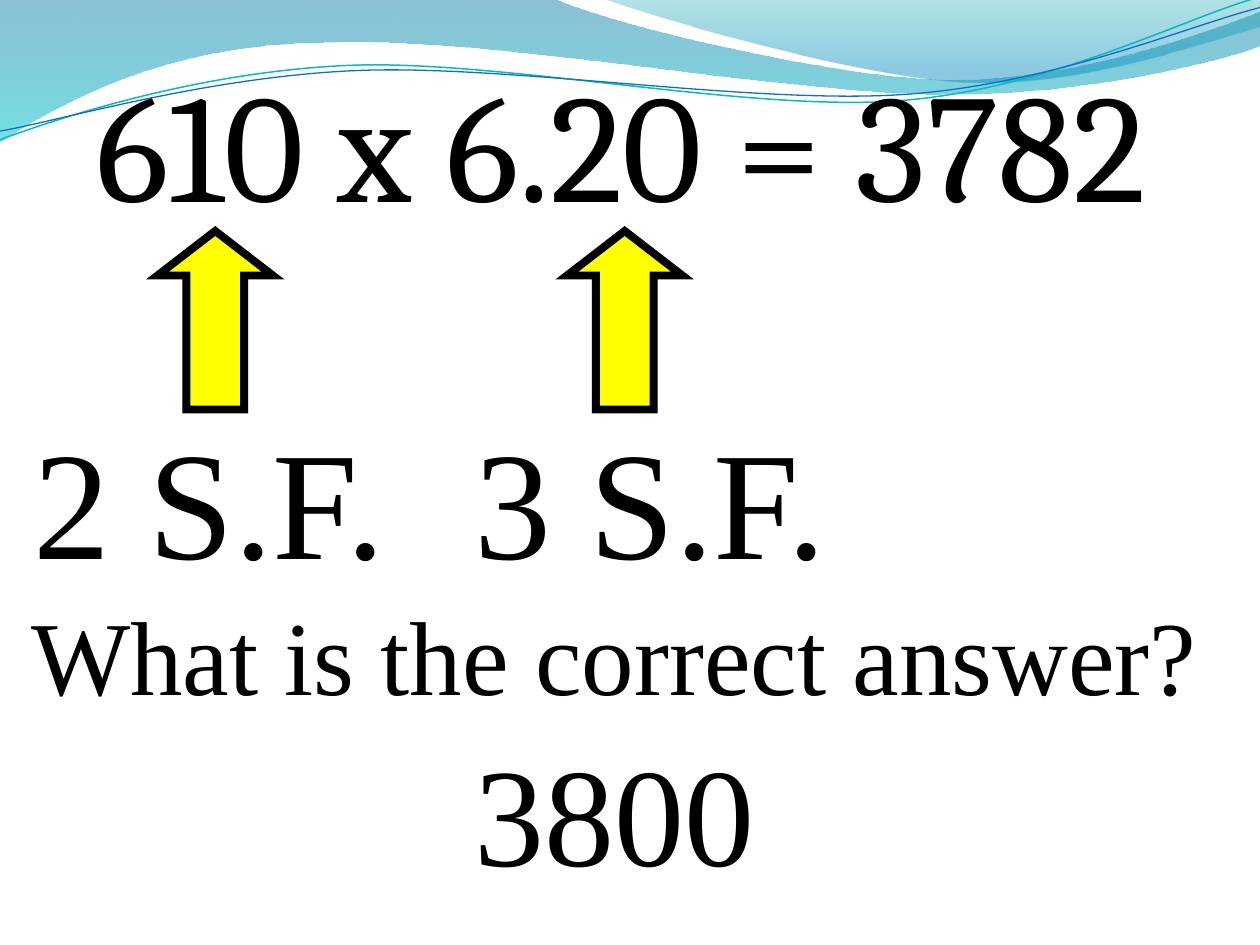
from lxml import etree
from pptx import Presentation
from pptx.dml.color import RGBColor
from pptx.enum.shapes import MSO_SHAPE
from pptx.enum.text import MSO_ANCHOR, PP_ALIGN
from pptx.oxml.ns import qn
from pptx.util import Pt

UP_ARROW = MSO_SHAPE.UP_ARROW
LEFT, CENTER = PP_ALIGN.LEFT, PP_ALIGN.CENTER
TOP = MSO_ANCHOR.TOP

BLACK, YELLOW = "000000", "FFFF00"
SERIF = "Times New Roman"
UNITS_PER_POINT = 100

# Outlines in points: a start, then one point for a line, three for a curve
LEFT_WAVE = [
    [(0, -0.7)], [(316.8, -0.7)],
    [(342.7, 12.2), (478.1, 45.4), (545.8, 45.4)],
    [(614.2, 45.4), (689.8, 18.7), (720, 6.5)],
    [(720.7, 25.9)],
    [(707.8, 31.7), (626.4, 54.7), (537.1, 54)],
    [(447.8, 54), (275, 20.2), (185, 24.5)],
    [(92.9, 25.2), (33.1, 59.8), (-0.7, 81.4)],
]
RIGHT_WAVE = [
    [(344.9, -0.7)],
    [(366.5, 7.9), (491, 44.6), (553.7, 46.8)],
    [(616.3, 49.7), (691.9, 23), (720, 15.1)],
    [(720, 0)],
]
TEAL_STRAND = [
    [(0, 79.9)],
    [(34.6, 67), (113.8, 41), (199.4, 37.4)],
    [(284.4, 33.8), (427, 64.1), (513.4, 57.6)],
    [(599.8, 51.1), (675.4, 10.8), (718.6, -1.4)],
]
BLUE_STRAND = [
    [(0, 74.9)],
    [(33.8, 69.1), (118.1, 43.9), (203.8, 40.3)],
    [(290.2, 36.7), (429.8, 59.8), (516.2, 54)],
    [(601.9, 48.2), (677.5, 15.1), (720, 4.3)],
]


def rgb(hex_color):
    return RGBColor.from_string(hex_color)


def apply_format(target, values):
    for name, value in values.items():
        setattr(target, name, value)


def add_outline(slide, outline, close):
    start, *points = [
        (x * UNITS_PER_POINT, y * UNITS_PER_POINT)
        for segment in outline for x, y in segment
    ]
    builder = slide.shapes.build_freeform(*start, scale=Pt(1) / UNITS_PER_POINT)
    builder.add_line_segments(points, close=close)
    shape = builder.convert_to_shape()
    shape.shadow.inherit = False
    # Join the three steps of each curve into one Bezier segment
    steps = iter(list(shape._element.iter(qn("a:lnTo"))))
    for segment in outline[1:]:
        first, *others = [next(steps) for _ in segment]
        if others:
            first.tag = qn("a:cubicBezTo")
        for step in others:
            first.append(step[0])
            step.getparent().remove(step)
    return shape


def add_wave(slide, outline, stops):
    wave = add_outline(slide, outline, close=True)
    wave.line.fill.background()
    wave.fill.gradient()
    wave.fill.gradient_angle = 270
    for stop, (position, color, _) in zip(wave.fill.gradient_stops, stops):
        stop.position = position
        stop.color.rgb = rgb(color)
    # Opacity of each gradient stop
    colors = wave._element.spPr.iter(qn("a:srgbClr"))
    for color_element, (_, _, opacity) in zip(colors, stops):
        etree.SubElement(color_element, qn("a:alpha"), val=str(opacity * 1000))


def add_strand(slide, outline, color, width):
    strand = add_outline(slide, outline, close=False)
    strand.fill.background()
    strand.line.color.rgb = rgb(color)
    strand.line.width = Pt(width)


def add_text(slide, text, box, size, font=SERIF, align=LEFT, spacing=1.0, inset=3.6):
    frame = slide.shapes.add_textbox(*map(Pt, box)).text_frame
    apply_format(frame, {
        "word_wrap": True, "vertical_anchor": TOP, "margin_top": Pt(inset),
    })
    paragraph = frame.paragraphs[0]
    apply_format(paragraph, {"alignment": align, "line_spacing": spacing})
    # Share of the line height kept above each paragraph
    paragraph.space_before = Pt(9.7 if spacing == 1 else 5.5)
    run = paragraph.add_run()
    run.text = text
    apply_format(run.font, {"name": font, "size": Pt(size)})
    run.font.color.rgb = rgb(BLACK)


def add_arrow(slide, left):
    arrow = slide.shapes.add_shape(UP_ARROW, Pt(left), Pt(132), Pt(66), Pt(102))
    arrow.shadow.inherit = False
    arrow.adjustments[0], arrow.adjustments[1] = 0.5, 0.386
    arrow.fill.solid()
    arrow.fill.fore_color.rgb = rgb(YELLOW)
    arrow.line.color.rgb = rgb(BLACK)
    arrow.line.width = Pt(4.5)
    # Sharp corners
    etree.SubElement(arrow.line._get_or_add_ln(), qn("a:miter"), lim="800000")


def main():
    deck = Presentation()
    apply_format(deck, {"slide_width": Pt(720), "slide_height": Pt(540)})
    slide = deck.slides.add_slide(deck.slide_layouts[6])

    # Wave decoration along the top
    add_wave(slide, LEFT_WAVE, [(0, "0074A1", 45), (1, "00C6CF", 55)])
    add_wave(slide, RIGHT_WAVE, [(0, "00A1A9", 30), (0.8, "008BBF", 45)])
    add_strand(slide, TEAL_STRAND, "0AB8BF", 0.85)
    add_strand(slide, BLUE_STRAND, "0F6FC6", 0.75)

    # Multiplication and the significant figures of each factor
    add_text(slide, "610 x 6.20 = 3782", (48, 24, 672, 108), 88, font="Cambria")
    for label, left in (("2 S.F.", 12), ("3 S.F.", 264)):
        add_text(slide, label, (left, 228, 240, 108), 88)
    for left in (90, 324):
        add_arrow(slide, left)

    # Question and answer
    add_text(slide, "What is the correct answer?", (0, 348, 702, 102), 60,
             align=CENTER, spacing=0.8)
    add_text(slide, "3800", (0, 318, 702, 189), 80,
             align=CENTER, spacing=0.8, inset=115.6)

    deck.save("out.pptx")


if __name__ == "__main__":
    main()
